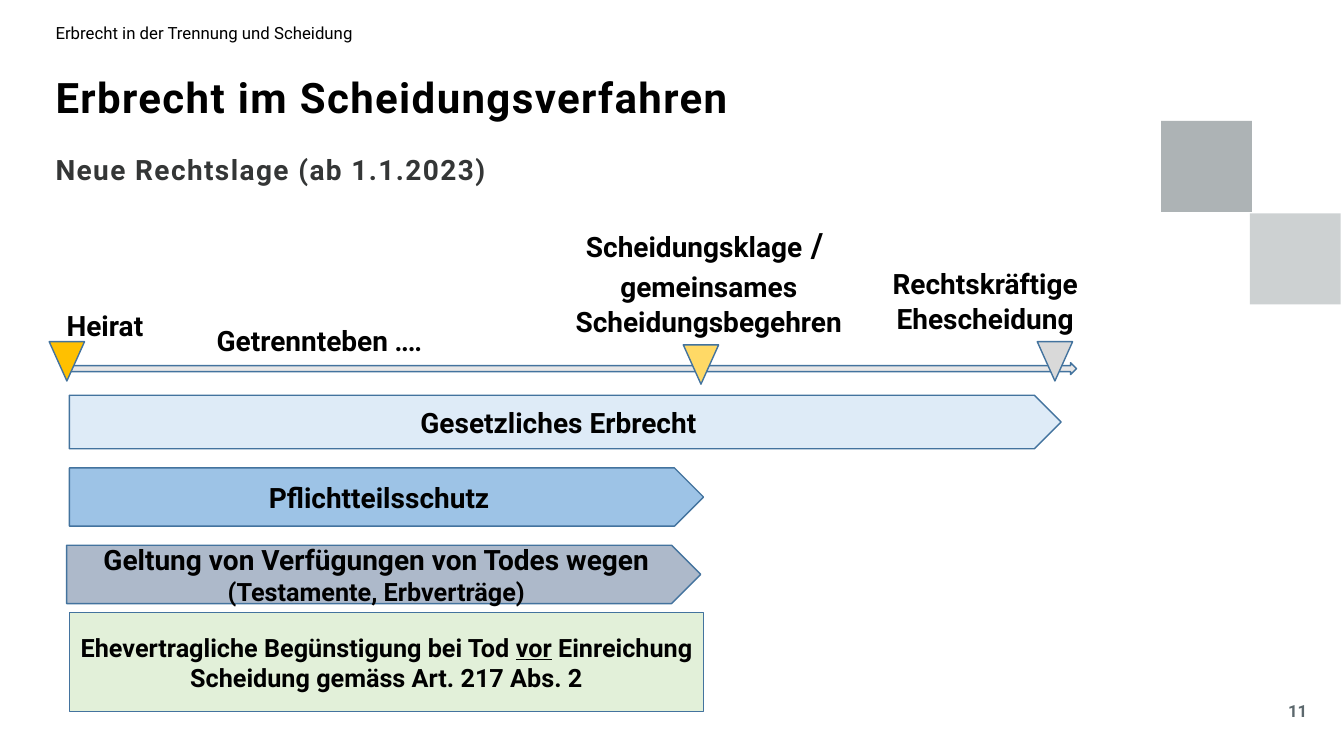
from lxml.etree import SubElement
from pptx import Presentation
from pptx.dml.color import RGBColor
from pptx.enum.shapes import MSO_SHAPE
from pptx.enum.text import MSO_ANCHOR, PP_ALIGN
from pptx.oxml.ns import qn
from pptx.util import Cm, Pt

EDGE = "43739E"
SLATE = "5C686D"


def color(code):
    return RGBColor.from_string(code)


def write(para, parts, ink="000000", bold=True, track=0):
    for text, size, *face in parts:
        run = para.add_run()
        run.text = text
        font = run.font
        font.name = "Roboto"
        font.size = Pt(size)
        font.bold = bold
        font.color.rgb = color(ink)
        if "under" in face:
            font.underline = True
        if "Lato" in face:
            font.name = "Lato"
        if track:
            run._r.get_or_add_rPr().set("spc", str(track))


def label(slide, box, lines, align=PP_ALIGN.LEFT, inset=(0, 0, 0), space=None, **style):
    frame = slide.shapes.add_textbox(*map(Cm, box)).text_frame
    frame.word_wrap = True
    frame.margin_left = 0
    frame.margin_top, frame.margin_right, frame.margin_bottom = map(Cm, inset)
    for i, parts in enumerate(lines):
        para = frame.add_paragraph() if i else frame.paragraphs[0]
        para.alignment = align
        if space:
            para.line_spacing = space
        write(para, parts, **style)


def block(slide, kind, box, fill, parts=(), edge=EDGE, alpha=None):
    shape = slide.shapes.add_shape(kind, *map(Cm, box))
    shape.shadow.inherit = False
    shape.fill.solid()
    shape.fill.fore_color.rgb = color(fill)
    if edge:
        shape.line.color.rgb = color(edge)
        shape.line.width = Pt(1)
    else:
        shape.line.fill.background()
    if alpha:
        tint = shape._element.spPr.find(qn("a:solidFill"))[0]
        SubElement(tint, qn("a:alpha")).set("val", str(alpha * 1000))
    if parts:
        frame = shape.text_frame
        frame.word_wrap = True
        frame.vertical_anchor = MSO_ANCHOR.MIDDLE
        frame.paragraphs[0].alignment = PP_ALIGN.CENTER
        write(frame.paragraphs[0], parts)
    return shape


def decor(slide, left, top, side):
    for x, y, alpha in ((0, 0, 50), (2.24, 2.33, 30)):
        block(slide, MSO_SHAPE.RECTANGLE, (left + x, top + y, side, side), SLATE,
              edge=None, alpha=alpha)


def header(slide, left, top, width):
    pad = (0.13, 0.25, 0.13)
    label(slide, (left, top, 11.61, 0.71),
          [[("Erbrecht in der Trennung und Scheidung", 12)]],
          inset=pad, space=0.9, bold=False)
    label(slide, (left, top + 1.4, width, 1.17),
          [[("Erbrecht im Scheidungsverfahren", 30)]], space=Pt(33), track=100)
    label(slide, (left, top + 3.43, width, 1.65),
          [[("Neue Rechtslage (ab 1.1.2023)", 20)]],
          space=0.9, ink="343636", track=100)


def footer(slide, left, top):
    label(slide, (left, top, 1.27, 0.71), [[("11", 12)]],
          inset=(0.13, 0.25, 0.13), space=0.9, ink=SLATE)


def timeline(slide, left, top, width):
    block(slide, MSO_SHAPE.RIGHT_ARROW, (left, top, width, 0.3), "E7E6E6")
    for x, y, fill in ((-0.39, -0.53, "FFC000"), (15.59, -0.45, "FFD966"),
                       (24.51, -0.53, "D9D9D9")):
        mark = block(slide, MSO_SHAPE.ISOSCELES_TRIANGLE,
                     (left + x, top + y, 0.89, 0.99), fill)
        mark.rotation = 180
    mid = PP_ALIGN.CENTER
    events = (
        (-0.23, -1.37, 2.49, 0.86, mid, [[("Heirat", 20)]]),
        (12.59, -3.5, 7.29, 2.9, mid,
         [[("Scheidungsklage", 20), (" / ", 24)],
          [("gemeinsames", 20), (" ", 24), ("Scheidungsbegehren", 20)]]),
        (20.85, -2.56, 4.7, 1.88, mid,
         [[("Rechtskräftige", 20), (" ", 24), ("Ehescheidung", 20)]]),
        (3.83, -0.99, 7.19, 0.86, PP_ALIGN.LEFT,
         [[("Getrennteben", 20), (" ....", 20, "Lato")]]),
    )
    for x, y, wide, high, align, lines in events:
        label(slide, (left + x, top + y, wide, high), lines, align)


def bars(slide, left, top, full, part):
    plate = MSO_SHAPE.PENTAGON
    rows = (
        (plate, 0, 0, full, 1.35, "DEEBF7", [("Gesetzliches Erbrecht", 20)]),
        (plate, 0, 1.83, part, 1.47, "9DC3E6", [("Pflichtteilsschutz", 20)]),
        (plate, -0.07, 3.78, part, 1.47, "ADB9CA",
         [("Geltung von Verfügungen von Todes wegen ", 20),
          ("(Testamente, Erbverträge)", 18)]),
        (MSO_SHAPE.RECTANGLE, 0, 5.48, part, 2.49, "E2F0D9",
         [("Ehevertragliche Begünstigung bei Tod ", 18), ("vor", 18, "under"),
          (" Einreichung Scheidung gemäss Art. 217 Abs. 2", 18)]),
    )
    for kind, x, y, wide, high, fill, parts in rows:
        block(slide, kind, (left + x, top + y, wide, high), fill, parts)


def main():
    deck = Presentation()
    deck.slide_width, deck.slide_height = Cm(33.87), Cm(19.05)
    slide = deck.slides.add_slide(deck.slide_layouts[6])
    decor(slide, 29.26, 3.05, 2.29)
    header(slide, 1.4, 0.51, 25.5)
    footer(slide, 32.46, 17.58)
    timeline(slide, 1.63, 9.14, 25.5)
    bars(slide, 1.75, 9.96, 24.99, 15.98)
    deck.save("out.pptx")


if __name__ == "__main__":
    main()
